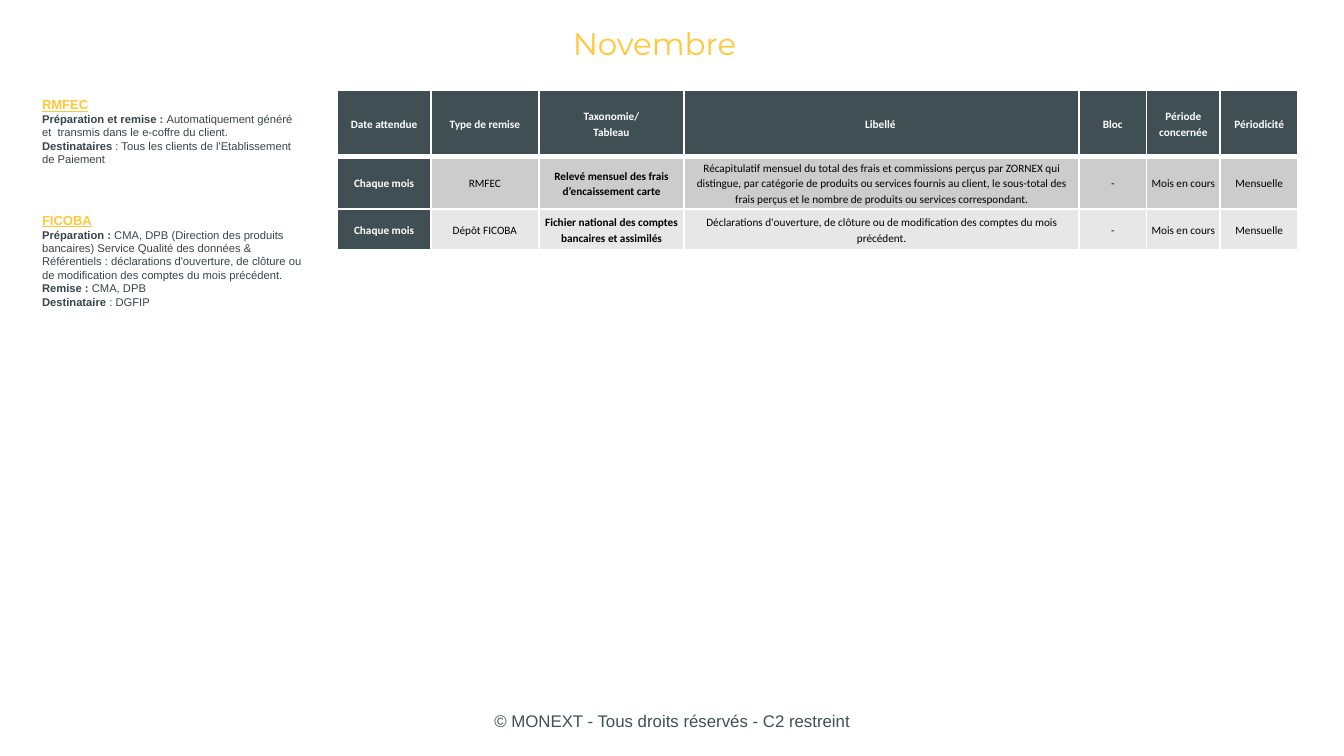
import pptx
import pptx.util
import pptx.dml.color
import pptx.enum.text
import pptx.oxml

# Content
TITLE = "Novembre"
FOOTER = "© MONEXT - Tous droits réservés - C2 restreint"

HEADS = ["Date attendue", "Type de remise", "Taxonomie/\nTableau", "Libellé ",
         "Bloc", "Période concernée", "Périodicité"]
ROWS = [
    ["Chaque mois", "RMFEC", "Relevé mensuel des frais d’encaissement carte",
     "Récapitulatif mensuel du total des frais et commissions perçus par ZORNEX "
     "qui distingue, par catégorie de produits ou services fournis au client, le "
     "sous-total des frais perçus et le nombre de produits ou services correspondant.",
     "-", "Mois en cours", "Mensuelle"],
    ["Chaque mois", "Dépôt FICOBA",
     "Fichier national des comptes bancaires et assimilés",
     "Déclarations d'ouverture, de clôture ou de modification des comptes du mois "
     "précédent.", "-", "Mois en cours", "Mensuelle"],
]

# Each note: heading, (bold label, plain text) pairs, top and height in % of slide
NOTES = [
    ("RMFEC", [
        ("Préparation et remise : ",
         "Automatiquement généré et  transmis dans le e-coffre du client."),
        ("Destinataires", " : Tous les clients de l'Etablissement de Paiement"),
    ], 11.9, 11.4),
    ("FICOBA", [
        ("Préparation :",
         " CMA, DPB (Direction des produits bancaires) Service Qualité des données "
         "& Référentiels : déclarations d'ouverture, de clôture ou de modification "
         "des comptes du mois précédent."),
        ("Remise : ", "CMA, DPB"),
        ("Destinataire", " : DGFIP"),
    ], 27.2, 14.8),
]

# Theme: colours and type sizes
THEME = {
    "gold": "FFC83A", "slate": "404F54", "ink": "38444B",
    "white": "FFFFFF", "black": "000000", "bands": ["CCCCCC", "E7E7E7"],
    "title": 16.6, "foot": 9, "head": 7, "body": 6,
    "sans": "Arial", "show": "Montserrat", "grid": "Calibri",
}

# Layout, in % of the slide's width or height
WIDE = 10
HIGH = WIDE * 9 / 16
COLS = [6.95, 8.05, 10.8, 29.4, 5, 5.5, 5.8]
BANDS = [8.85, 6.93, 5.33]
BOLD = {0, 2}  # table columns set in bold

CENTER = pptx.enum.text.PP_ALIGN.CENTER
MIDDLE = pptx.enum.text.MSO_ANCHOR.MIDDLE


def across(share):
    return pptx.util.Inches(WIDE * share / 100)


def down(share):
    return pptx.util.Inches(HIGH * share / 100)


def tint(code):
    return pptx.dml.color.RGBColor.from_string(code)


def write(para, text, *, size, color, font, bold=False, line=False,
          align=None, space=None):
    """Add one formatted run to a paragraph."""
    run = para.add_run()
    run.text = text
    run.font.size = pptx.util.Pt(size)
    run.font.name = font
    run.font.bold = bold
    run.font.underline = line
    run.font.color.rgb = tint(color)
    if align is not None:
        para.alignment = align
    if space:
        para.line_spacing = space


def frame(slide, left, top, width, height, anchor=None):
    box = slide.shapes.add_textbox(across(left), down(top), across(width), down(height))
    body = box.text_frame
    body.word_wrap = True
    if anchor is not None:
        body.vertical_anchor = anchor
    return body


def edge(cell, widths):
    """Draw white borders; the sides come in schema order, before the fill."""
    props = cell._tc.get_or_add_tcPr()
    space = pptx.oxml.ns.nsdecls("a")
    for spot, (side, width) in enumerate(zip("LRTB", widths)):
        props.insert(spot, pptx.oxml.parse_xml(
            f'<a:ln{side} {space} w="{pptx.util.Pt(width)}"><a:solidFill>'
            f'<a:srgbClr val="{THEME["white"]}"/></a:solidFill></a:ln{side}>'))


def fill(cell, text, row, col):
    """Format one table cell by its row and column."""
    dark = row == 0 or col == 0
    cell.fill.solid()
    cell.fill.fore_color.rgb = tint(THEME["slate"] if dark else THEME["bands"][row - 1])
    cell.vertical_anchor = MIDDLE
    cell.margin_left = cell.margin_right = pptx.util.Inches(0.03)
    cell.margin_top = cell.margin_bottom = pptx.util.Inches(0.02)
    body = cell.text_frame
    for num, part in enumerate(text.split("\n")):
        para = body.add_paragraph() if num else body.paragraphs[0]
        write(para, part, size=THEME["body"], font=THEME["grid"],
              color=THEME["white" if dark else "black"],
              bold=row == 0 or col in BOLD, align=CENTER, space=1.15)
    edge(cell, (1, 1, 3 if row == 1 else 1, 3 if row == 0 else 1))


def main():
    deck = pptx.Presentation()
    deck.slide_width = pptx.util.Inches(WIDE)
    deck.slide_height = pptx.util.Inches(HIGH)
    slide = deck.slides.add_slide(deck.slide_layouts[6])

    # Footer and title
    write(frame(slide, 34.15, 92.7, 31.7, 5.3, MIDDLE).paragraphs[0], FOOTER,
          size=THEME["foot"], color=THEME["slate"], font=THEME["sans"], align=CENTER)
    write(frame(slide, 20.95, 2.5, 55.5, 6.4, MIDDLE).paragraphs[0], TITLE,
          size=THEME["title"], color=THEME["gold"], font=THEME["show"], align=CENTER)

    # Table
    grid = slide.shapes.add_table(
        len(BANDS), len(COLS), across(25.1), down(11.9),
        across(sum(COLS)), down(sum(BANDS))).table
    for col, share in zip(grid.columns, COLS):
        col.width = across(share)
    for row, share in zip(grid.rows, BANDS):
        row.height = down(share)
    for row, texts in enumerate([HEADS] + ROWS):
        for col, text in enumerate(texts):
            fill(grid.cell(row, col), text, row, col)

    # Side notes
    for head, lines, top, height in NOTES:
        body = frame(slide, 2.15, top, 21.4, height)
        write(body.paragraphs[0], head, size=THEME["head"], color=THEME["gold"],
              font=THEME["sans"], bold=True, line=True)
        for label, text in lines:
            para = body.add_paragraph()
            for part, bold in ((label, True), (text, False)):
                write(para, part, size=THEME["body"], color=THEME["ink"],
                      font=THEME["sans"], bold=bold)

    deck.save("out.pptx")


if __name__ == "__main__":
    main()
